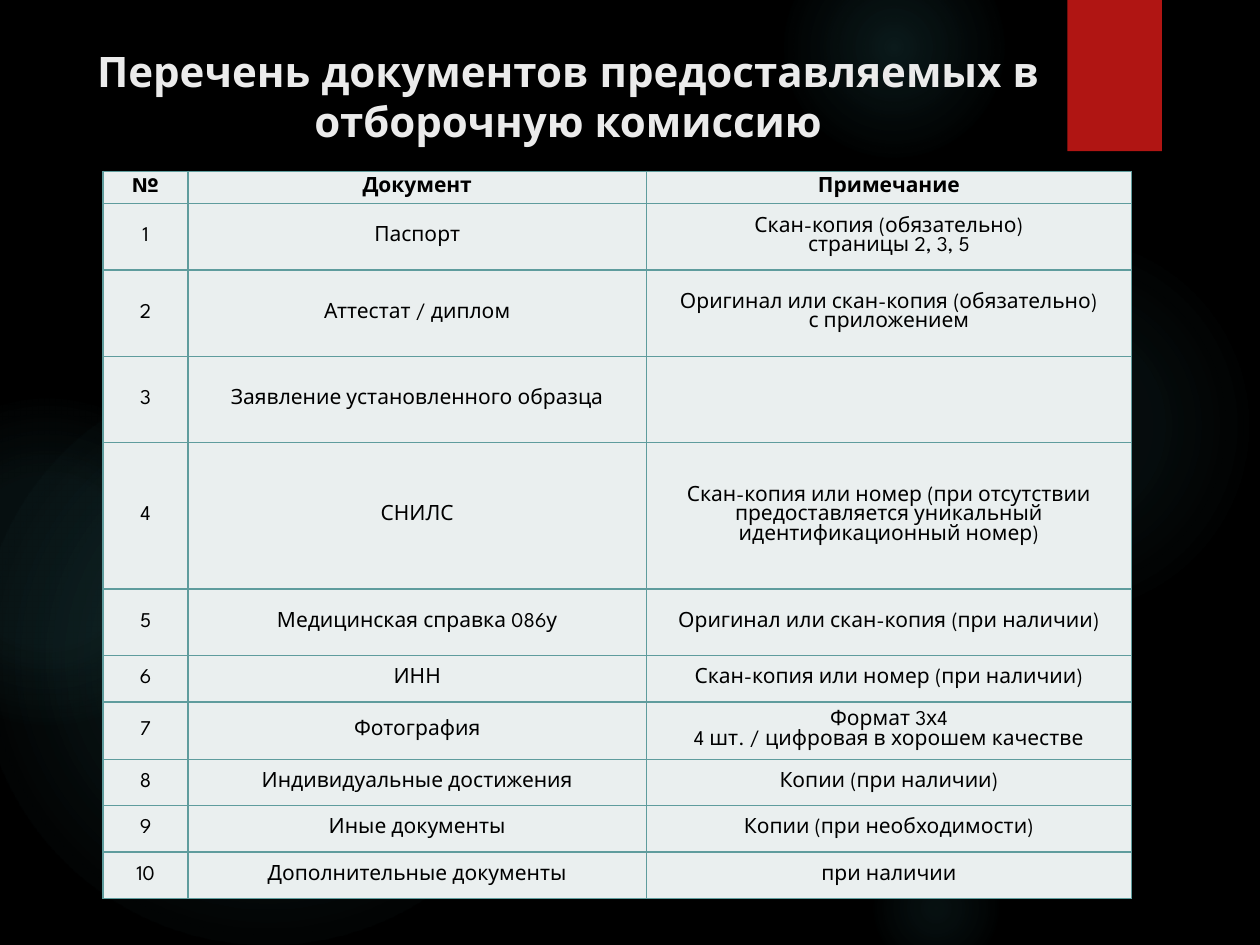
import copy

import lxml.etree
import pptx
import pptx.dml.color
import pptx.enum.shapes
import pptx.enum.text
import pptx.oxml
import pptx.oxml.ns
import pptx.util

Pt = pptx.util.Pt
qn = pptx.oxml.ns.qn
SHAPE = pptx.enum.shapes.MSO_SHAPE
FONT = "League Spartan"
GLOW = "50B9C1"

# left, top, size, then (position %, opacity %) stops from the centre out
GLOWS = [
    (496, 132, 222, [(0, 7), (36, 6), (69, 0)]),
    (448, -36, 126, [(0, 14), (36, 7), (73, 0)]),
    (496, 480, 78, [(0, 9), (36, 5), (66, 0)]),
    (-12, 210, 330, [(0, 11), (36, 10), (75, 0)]),
    (-66, 228, 186, [(0, 8), (36, 8), (72, 0)]),
]

# row height, document, note
ROWS = [
    (15.3, "Документ", "Примечание"),
    (38, "Паспорт", "Скан-копия (обязательно)\nстраницы 2, 3, 5"),
    (49.3, "Аттестат / диплом",
     "Оригинал или скан-копия (обязательно)\nс приложением"),
    (49.3, "Заявление установленного образца", ""),
    (83.7, "СНИЛС", "Скан-копия или номер (при отсутствии предоставляется "
     "уникальный идентификационный номер)"),
    (38, "Медицинская справка 086у", "Оригинал или скан-копия (при наличии)"),
    (26.55, "ИНН", "Скан-копия или номер (при наличии)"),
    (26.55, "Фотография", "Формат 3х4\n4 шт. / цифровая в хорошем качестве"),
    (26.55, "Индивидуальные достижения", "Копии (при наличии)"),
    (26.55, "Иные документы", "Копии (при необходимости)"),
    (26.55, "Дополнительные документы", "при наличии"),
]


def color(code):
    return pptx.dml.color.RGBColor.from_string(code)


def write(frame, text, size=12, tint="000000", bold=False):
    """Fill a text frame with one centred paragraph; newlines are breaks."""
    frame.word_wrap = True
    para = frame.paragraphs[0]
    para.text = text
    para.alignment = pptx.enum.text.PP_ALIGN.CENTER
    for run in para.runs:
        run.font.name = FONT
        run.font.size = Pt(size)
        run.font.bold = bold
        run.font.color.rgb = color(tint)
    for gap in para._p.findall(qn("a:br")):
        gap.append(copy.deepcopy(para.runs[0].font._rPr))


def draw(slide, kind, box, tint):
    shape = slide.shapes.add_shape(kind, *map(Pt, box))
    shape.shadow.inherit = False
    shape.line.fill.background()
    shape.fill.solid()
    shape.fill.fore_color.rgb = color(tint)
    return shape


def add_glow(slide, box, stops):
    """Draw a disc that fades out from its centre."""
    disc = draw(slide, SHAPE.OVAL, box, GLOW)
    marks = "".join(
        f'<a:gs pos="{pos * 1000}"><a:srgbClr val="{GLOW}">'
        f'<a:alpha val="{alpha * 1000}"/></a:srgbClr></a:gs>'
        for pos, alpha in stops)
    grad = pptx.oxml.parse_xml(
        f'<a:gradFill {pptx.oxml.ns.nsdecls("a")}><a:gsLst>{marks}</a:gsLst>'
        '<a:path path="circle"><a:fillToRect l="50000" t="50000" '
        'r="50000" b="50000"/></a:path></a:gradFill>')
    props = disc._element.spPr
    props.replace(props.find(qn("a:solidFill")), grad)


def add_back(slide):
    slide.background.fill.solid()
    slide.background.fill.fore_color.rgb = color("000000")
    for left, top, size, stops in GLOWS:
        add_glow(slide, (left, top, size, size), stops)
    draw(slide, SHAPE.RECTANGLE, (610, 0, 54, 86.4), "B01513")


def add_title(slide, box):
    frame = slide.shapes.add_textbox(*map(Pt, box)).text_frame
    write(frame, "Перечень документов предоставляемых в отборочную комиссию",
          size=24, tint="EBEBEB", bold=True)


def set_edges(cell, tint, width):
    props = cell._tc.get_or_add_tcPr()
    for spot, side in enumerate(("lnL", "lnR", "lnT", "lnB")):
        line = lxml.etree.Element(qn("a:" + side), w=str(Pt(width)))
        fill = lxml.etree.SubElement(line, qn("a:solidFill"))
        lxml.etree.SubElement(fill, qn("a:srgbClr"), val=tint)
        props.insert(spot, line)


def add_list(slide, box):
    left, top, width = box
    first, second = 48.4, 262.1
    widths = (first, second, width - first - second)
    height = sum(row[0] for row in ROWS)
    table = slide.shapes.add_table(
        len(ROWS), len(widths), Pt(left), Pt(top), Pt(width), Pt(height)).table
    for column, wide in zip(table.columns, widths):
        column.width = Pt(wide)
    for index, (tall, name, note) in enumerate(ROWS):
        table.rows[index].height = Pt(tall)
        words = (str(index) if index else "№", name, note)
        for cell, text in zip(table.rows[index].cells, words):
            cell.margin_left = cell.margin_right = Pt(3.6)
            cell.margin_top = cell.margin_bottom = Pt(2)
            cell.vertical_anchor = pptx.enum.text.MSO_ANCHOR.MIDDLE
            cell.fill.solid()
            cell.fill.fore_color.rgb = color("EAEFEF")
            set_edges(cell, "5F9C9D", 1)
            write(cell.text_frame, text, bold=index == 0)


def main():
    deck = pptx.Presentation()
    deck.slide_width, deck.slide_height = Pt(720), Pt(540)
    slide = deck.slides.add_slide(deck.slide_layouts[6])
    add_back(slide)
    add_title(slide, (46.8, 22.3, 555.8, 110.2))
    add_list(slide, (59, 97.9, 587.5))
    deck.save("out.pptx")


if __name__ == "__main__":
    main()
